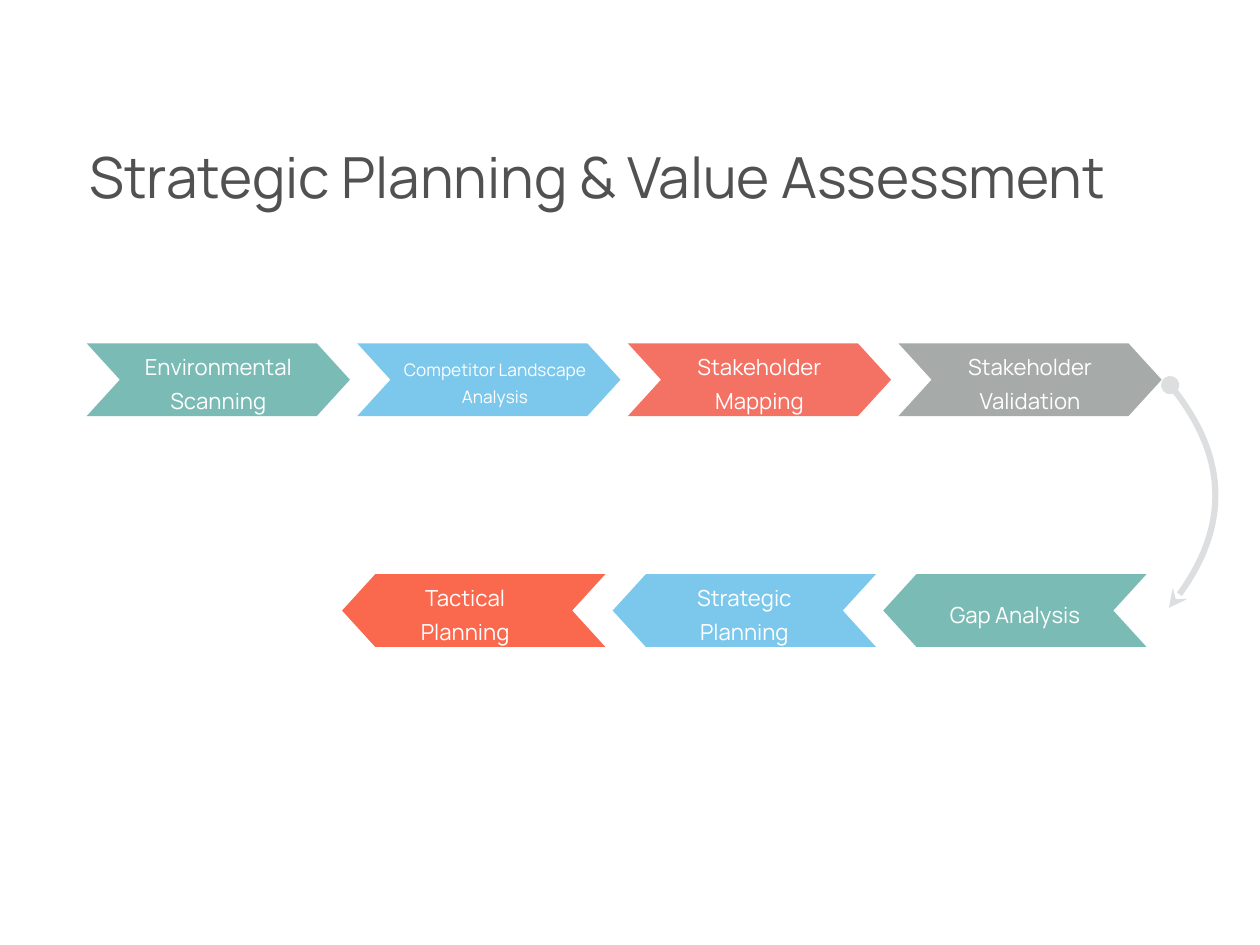
from pptx import Presentation
from pptx.dml.color import RGBColor
from pptx.enum.text import MSO_ANCHOR, PP_ALIGN
from pptx.oxml.ns import qn
from pptx.util import Pt
from lxml.etree import SubElement

FONT = "Manrope"
WIDE, HIGH, NOTCH = 214, 59.2, 27
STEP = 219.9

# label, fill, text size, left and right text margins
TOP = [
    ("Environmental Scanning", "7BBBB5", 18, 24, 24),
    ("Competitor Landscape Analysis", "7CC8EC", 14, 29, 19),
    ("Stakeholder Mapping", "F47264", 18, 33, 33),
    ("Stakeholder Validation", "A6AAA9", 18, 33, 33),
]
LOW = [
    ("Gap Analysis", "7BBBB5", 18, 45, 45),
    ("Strategic Planning", "7CC8EC", 18, 45, 45),
    ("Tactical Planning", "FA694E", 18, 31, 45),
]


def color(code):
    return RGBColor.from_string(code)


def write(shape, text, size, ink, align, left, right):
    frame = shape.text_frame
    frame.word_wrap = True
    frame.vertical_anchor = MSO_ANCHOR.MIDDLE
    frame.margin_left, frame.margin_right = Pt(left), Pt(right)
    frame.margin_top = frame.margin_bottom = Pt(0)
    para = frame.paragraphs[0]
    para.alignment = align
    para.line_spacing = 1.3
    para.space_before = Pt(0)
    run = para.add_run()
    run.text = text
    run.font.name = FONT
    run.font.size = Pt(size)
    run.font.color.rgb = color(ink)


def trace(slide, points, close):
    """Draw straight segments through points given in points."""
    spots = [(Pt(x), Pt(y)) for x, y in points]
    build = slide.shapes.build_freeform(*spots[0])
    build.add_line_segments(spots[1:], close=close)
    shape = build.convert_to_shape()
    shape.shadow.inherit = False
    return shape


def add_step(slide, x, y, way, step):
    """Draw one chevron, pointing right if way is 1 and left if -1."""
    label, fill, size, left, right = step
    tail = x if way > 0 else x + WIDE
    tip = tail + way * WIDE
    neck = tip - way * NOTCH
    shape = trace(slide, [
        (tail, y), (neck, y), (tip, y + HIGH / 2), (neck, y + HIGH),
        (tail, y + HIGH), (tail + way * NOTCH, y + HIGH / 2),
    ], True)
    shape.fill.solid()
    shape.fill.fore_color.rgb = color(fill)
    shape.line.fill.background()
    write(shape, label, size, "FFFFFF", PP_ALIGN.CENTER, left, right)


def add_row(slide, x, y, way, steps):
    for i, step in enumerate(steps):
        add_step(slide, x + way * i * STEP, y, way, step)


def add_curve(slide, start, bend, end, count=32):
    """Draw a quadratic curve with a dot at its start and an arrowhead."""
    points = []
    for i in range(count + 1):
        t = i / count
        points.append([(1 - t) ** 2 * a + 2 * t * (1 - t) * b + t * t * c
                       for a, b, c in zip(start, bend, end)])
    shape = trace(slide, points, False)
    shape.fill.background()
    shape.line.color.rgb = color("DCDEE0")
    shape.line.width = Pt(5)
    line = shape.line._get_or_add_ln()
    SubElement(line, qn("a:headEnd"), type="oval")
    SubElement(line, qn("a:tailEnd"), type="stealth")


def add_title(slide, text):
    title = slide.shapes.title
    title.left, title.top = Pt(70.6), Pt(98.3)
    title.width, title.height = Pt(834), Pt(72)
    write(title, text, 46, "515151", PP_ALIGN.LEFT, 2, 2)


def main():
    deck = Presentation()
    deck.slide_width, deck.slide_height = Pt(1024), Pt(768)
    slide = deck.slides.add_slide(deck.slide_layouts[5])
    add_title(slide, "Strategic Planning & Value Assessment")
    add_curve(slide, (951, 313), (1025, 403), (950, 494))
    add_row(slide, 70.4, 279, 1, TOP)
    add_row(slide, 717.8, 466.6, -1, LOW)
    deck.save("out.pptx")


if __name__ == "__main__":
    main()
